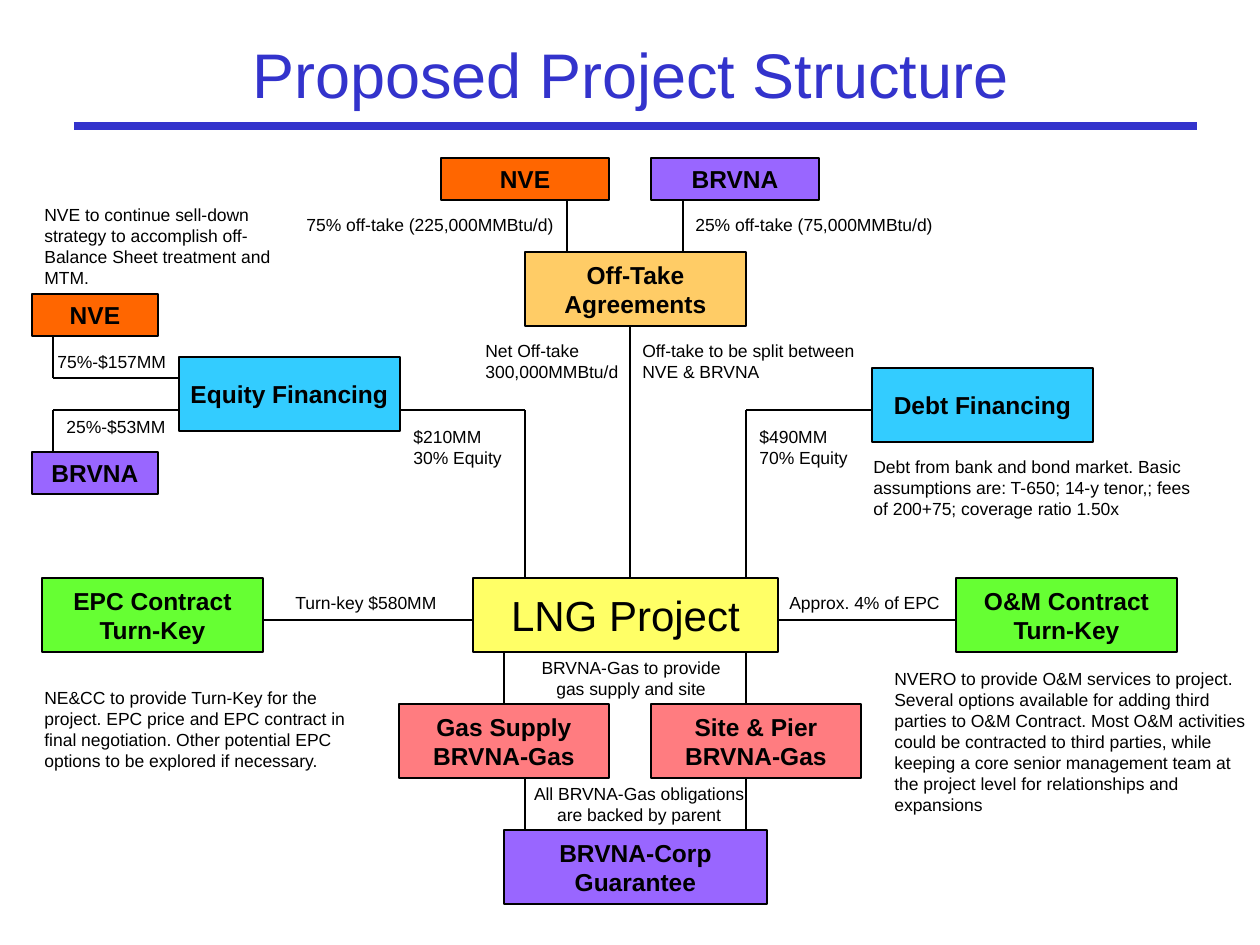
import itertools
from dataclasses import dataclass

import pptx
import pptx.dml.color
import pptx.enum.shapes
import pptx.enum.text
import pptx.oxml
import pptx.oxml.ns
import pptx.util

PX = 914400 / 126
ALIGN = pptx.enum.text.PP_ALIGN
ANCHOR = pptx.enum.text.MSO_ANCHOR


@dataclass(frozen=True)
class Theme:
    font: str = "Arial"
    ink: str = "000000"
    accent: str = "3333CC"
    project: str = "FFFF66"
    supply: str = "FF7C80"
    contract: str = "66FF33"
    finance: str = "33CCFF"
    offtake: str = "FFCC66"
    sponsor: str = "FF6600"
    partner: str = "9966FF"
    title_size: int = 36
    project_size: int = 24
    box_size: int = 14
    note_size: int = 10
    hairline: float = 0.75
    rule: float = 4.5


THEME = Theme()


def emu(*lengths):
    return [pptx.util.Emu(round(length * PX)) for length in lengths]


def color(code):
    return pptx.dml.color.RGBColor.from_string(code)


def write(frame, text, size=THEME.note_size, ink=THEME.ink, bold=False,
          align=ALIGN.LEFT, anchor=ANCHOR.TOP, wrap=True):
    frame.word_wrap = wrap
    frame.vertical_anchor = anchor
    for index, line in enumerate(text.split("\n")):
        para = frame.add_paragraph() if index else frame.paragraphs[0]
        para.alignment = align
        span = para.add_run()
        span.text = line
        span.font.name = THEME.font
        span.font.size = pptx.util.Pt(size)
        span.font.bold = bold
        span.font.color.rgb = color(ink)


def add_text(page, bounds, text, **style):
    box = page.shapes.add_textbox(*emu(*bounds))
    write(box.text_frame, text, **style)


def add_box(page, bounds, text, fill, size=THEME.box_size, bold=True):
    box = page.shapes.add_shape(
        pptx.enum.shapes.MSO_SHAPE.RECTANGLE, *emu(*bounds))
    box.shadow.inherit = False
    box.fill.solid()
    box.fill.fore_color.rgb = color(fill)
    box.line.color.rgb = color(THEME.ink)
    box.line.width = pptx.util.Pt(THEME.hairline)
    write(box.text_frame, text, size=size, bold=bold, wrap=False,
          align=ALIGN.CENTER, anchor=ANCHOR.MIDDLE)


def add_wire(page, *points, ink=THEME.ink, width=THEME.hairline):
    for start, end in itertools.pairwise(points):
        wire = page.shapes.add_connector(
            pptx.enum.shapes.MSO_CONNECTOR.STRAIGHT, *emu(*start, *end))
        wire.line.color.rgb = color(ink)
        wire.line.width = pptx.util.Pt(width)
        properties = wire._element.spPr
        properties.append(pptx.oxml.parse_xml(
            "<a:effectLst %s/>" % pptx.oxml.ns.nsdecls("a")))


def add_heading(page):
    add_text(page, (95, 21, 1071, 105), "Proposed Project Structure",
             size=THEME.title_size, ink=THEME.accent,
             align=ALIGN.CENTER, anchor=ANCHOR.MIDDLE)
    add_wire(page, (74, 126), (1197, 126), ink=THEME.accent, width=THEME.rule)


def add_wires(page):
    routes = [
        [(567, 200), (567, 252)],
        [(683, 200), (683, 252)],
        [(630, 326), (630, 578)],
        [(53, 336), (53, 378), (179, 378)],
        [(53, 452), (53, 410), (179, 410)],
        [(399, 410), (525, 410), (525, 578)],
        [(872, 410), (746, 410), (746, 578)],
        [(263, 620), (473, 620)],
        [(777, 620), (956, 620)],
        [(504, 651), (504, 704)],
        [(746, 651), (746, 704)],
        [(525, 777), (525, 830)],
        [(746, 777), (746, 830)],
    ]
    for route in routes:
        add_wire(page, *route)


def add_boxes(page):
    add_box(page, (473, 578, 305, 74), "LNG Project", THEME.project,
            size=THEME.project_size, bold=False)
    large = [
        (399, 704, 210, "Gas Supply\nBRVNA-Gas", THEME.supply),
        (651, 704, 210, "Site & Pier\nBRVNA-Gas", THEME.supply),
        (42, 578, 221, "EPC Contract\nTurn-Key", THEME.contract),
        (956, 578, 221, "O&M Contract\nTurn-Key", THEME.contract),
        (504, 830, 263, "BRVNA-Corp\nGuarantee", THEME.partner),
        (179, 357, 221, "Equity Financing", THEME.finance),
        (872, 368, 221, "Debt Financing", THEME.finance),
        (525, 252, 221, "Off-Take\nAgreements", THEME.offtake),
    ]
    small = [
        (441, 158, 168, "NVE", THEME.sponsor),
        (651, 158, 168, "BRVNA", THEME.partner),
        (32, 294, 126, "NVE", THEME.sponsor),
        (32, 452, 126, "BRVNA", THEME.partner),
    ]
    for height, group in ((74, large), (42, small)):
        for left, top, width, text, fill in group:
            add_box(page, (left, top, width, height), text, fill)


def add_labels(page):
    labels = [
        (283, 586, 180, 34, "Turn-key $580MM"),
        (777, 586, 178, 34, "Approx. 4% of EPC"),
        (401, 420, 122, 55, "$210MM\n30% Equity"),
        (747, 420, 122, 55, "$490MM\n70% Equity"),
        (45, 345, 146, 34, "75%-$157MM"),
        (54, 410, 146, 34, "25%-$53MM"),
    ]
    for *bounds, text in labels:
        add_text(page, bounds, text)
    for *bounds, text in [
        (506, 651, 250, 55, "BRVNA-Gas to provide\ngas supply and site"),
        (499, 777, 280, 55, "All BRVNA-Gas obligations\nare backed by parent"),
    ]:
        add_text(page, bounds, text, align=ALIGN.CENTER)


def add_notes(page):
    notes = [
        (32, 198, 273, 97, "NVE to continue sell-down strategy to accomplish "
         "off-Balance Sheet treatment and MTM."),
        (294, 208, 294, 34, "75% off-take (225,000MMBtu/d)"),
        (683, 208, 262, 34, "25% off-take (75,000MMBtu/d)"),
        (473, 334, 168, 55, "Net Off-take 300,000MMBtu/d"),
        (630, 334, 262, 55, "Off-take to be split between\nNVE & BRVNA"),
        (861, 450, 357, 76, "Debt from bank and bond market. Basic assumptions "
         "are: T-650; 14-y tenor,; fees of 200+75; coverage ratio 1.50x"),
        (32, 681, 347, 97, "NE&CC to provide Turn-Key for the project. EPC "
         "price and EPC contract in final negotiation. Other potential EPC "
         "options to be explored if necessary."),
        (882, 662, 378, 160, "NVERO to provide O&M services to project. "
         "Several options available for adding third parties to O&M Contract. "
         "Most O&M activities could be contracted to third parties, while "
         "keeping a core senior management team at the project level for "
         "relationships and expansions"),
    ]
    for *bounds, text in notes:
        add_text(page, bounds, text)


def main():
    deck = pptx.Presentation()
    deck.slide_width, deck.slide_height = emu(1260, 945)
    page = deck.slides.add_slide(deck.slide_layouts[6])
    add_heading(page)
    add_wires(page)
    add_boxes(page)
    add_labels(page)
    add_notes(page)
    deck.save("out.pptx")


if __name__ == "__main__":
    main()
